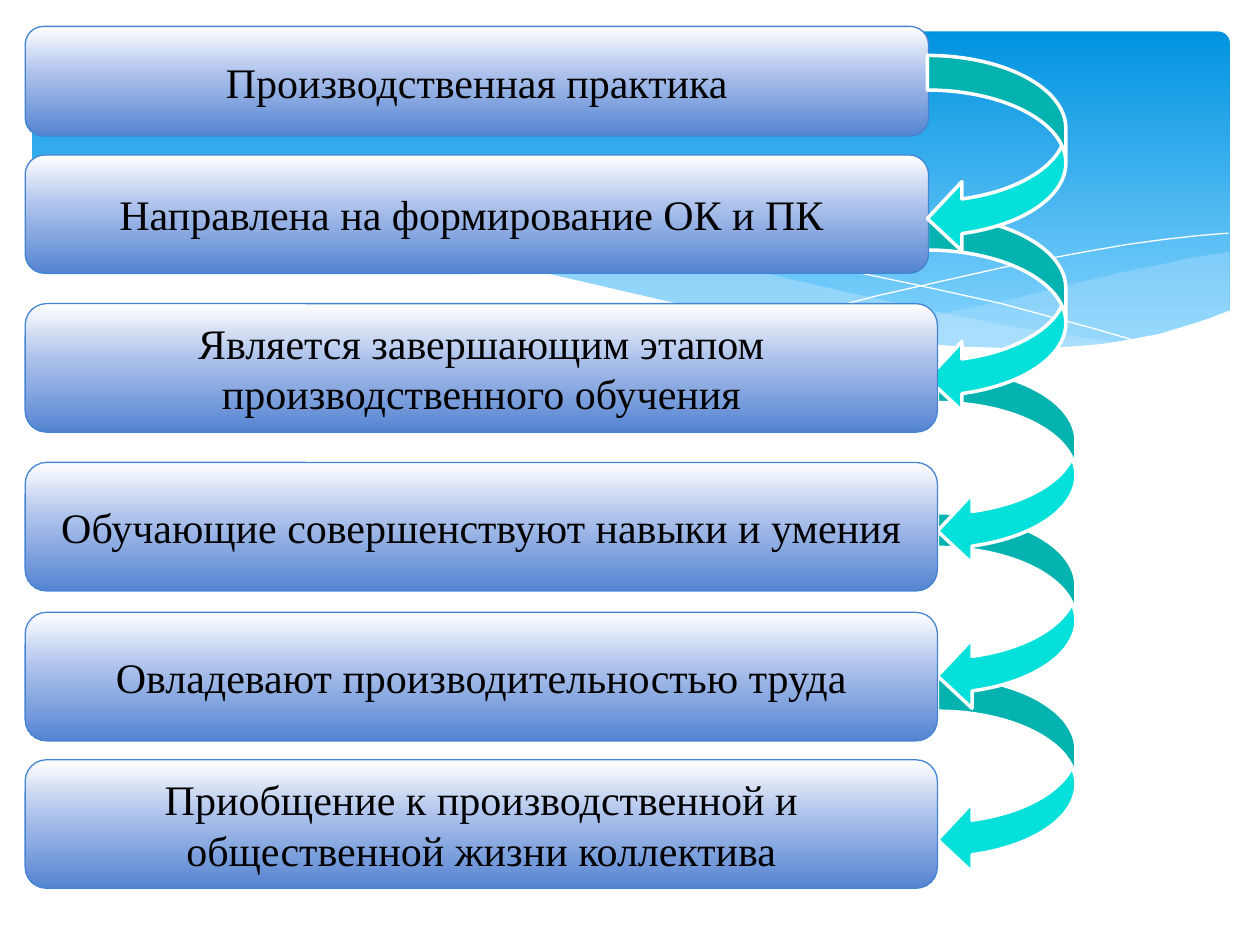
from dataclasses import dataclass

from lxml import etree
from pptx import Presentation, util as u
from pptx.dml.color import RGBColor
from pptx.enum import shapes, text
from pptx.oxml.ns import qn


@dataclass(frozen=True)
class Theme:
    font: str = "Times New Roman"
    size: int = 24
    ink: str = "000000"
    white: str = "FFFFFF"
    wave: str = "C6E7FC"
    arrow: str = "05E0DB"
    box_line: str = "4584D3"
    sky: tuple = ((0, "0293E0"), (90, "83D3FE"))
    box: tuple = ((0, "FFFFFF"), (44, "ABC0EB"), (100, "5484D1"))


@dataclass(frozen=True)
class Step:
    label: str
    top: float
    width: float
    height: float


@dataclass(frozen=True)
class Wave:
    points: tuple
    opacity: int = 100
    filled: bool = True


THEME = Theme()

STEPS = (
    Step("Производственная практика", 0.21, 7.17, 0.87),
    Step("Направлена на формирование ОК и ПК ", 1.23, 7.17, 0.94),
    Step("Является завершающим этапом производственного обучения", 2.41, 7.24, 1.02),
    Step("Обучающие совершенствуют навыки и умения", 3.67, 7.24, 1.02),
    Step("Овладевают производительностью труда", 4.86, 7.24, 1.02),
    Step("Приобщение к производственной и общественной жизни коллектива", 6.03, 7.24, 1.02),
)

# Left and top of each arrow, back to front; the last one lies over the boxes
ARROWS_BEHIND = ((7.44, 5.37), (7.44, 4.07), (7.44, 2.92), (7.36, 1.71))
ARROW_IN_FRONT = (7.36, 0.44)

WAVES = (
    Wave(((9.76, 2), (9.48, 2.04), (9.21, 2.1), (8.91, 2.16), (8.61, 2.23),
          (8.05, 2.37), (7.53, 2.48), (7.06, 2.57), (6.61, 2.65), (6.91, 2.69),
          (7.19, 2.72), (7.45, 2.75), (7.69, 2.77), (8.03, 2.78), (8.35, 2.77),
          (8.63, 2.75), (8.89, 2.72), (9.13, 2.67), (9.35, 2.62), (9.63, 2.52),
          (9.76, 2.47)), 29),
    Wave(((8.93, 2.73), (8.66, 2.69), (8.07, 2.6), (7.41, 2.47), (6.68, 2.31),
          (6.29, 2.22), (5.84, 2.11), (5.41, 2.03), (5.02, 1.96), (4.65, 1.91),
          (4.2, 1.87), (3.8, 1.85), (3.44, 1.86), (3.13, 1.88), (2.86, 1.91),
          (3.23, 1.96), (3.62, 2.03), (4.04, 2.11), (4.49, 2.22), (4.91, 2.32),
          (5.3, 2.4), (5.84, 2.52), (6.34, 2.61), (6.8, 2.68), (7.22, 2.74),
          (7.61, 2.77), (7.96, 2.78), (8.28, 2.78), (8.57, 2.77), (8.76, 2.75)), 40),
    Wave(((3.09, 1.95), (3.28, 1.92), (3.53, 1.89), (3.87, 1.87), (4.33, 1.87),
          (4.69, 1.89), (5.1, 1.92), (5.56, 1.97), (6.08, 2.04), (6.65, 2.13),
          (7.27, 2.26), (7.95, 2.41), (8.69, 2.61), (9.07, 2.72)), filled=False),
    Wave(((6.13, 2.57), (6.53, 2.46), (6.95, 2.35), (7.48, 2.23), (8.06, 2.1),
          (8.66, 1.99), (8.95, 1.94), (9.24, 1.9), (9.51, 1.87), (9.75, 1.85)),
         filled=False),
)
LOWER_EDGE = Wave((
    (9.77, 2.46), (9.59, 2.53), (9.4, 2.59), (9.2, 2.65), (8.99, 2.69),
    (8.75, 2.73), (8.5, 2.75), (8.23, 2.77), (7.93, 2.76), (7.61, 2.75),
    (7.26, 2.72), (6.88, 2.68), (6.48, 2.62), (6.03, 2.54), (5.55, 2.45),
    (5.03, 2.33), (4.47, 2.2), (3.91, 2.07), (3.4, 1.97), (2.92, 1.9),
    (2.5, 1.86), (2.11, 1.84), (1.77, 1.84), (1.46, 1.85), (1.19, 1.87),
    (0.95, 1.91), (0.76, 1.95), (0.59, 1.99), (0.46, 2.03), (0.36, 2.07),
    (0.23, 2.13), (0.23, 3.29), (9.77, 3.29)))


def color(value: str) -> RGBColor:
    return RGBColor.from_string(value)


def fill_gradient(shape, stops: tuple) -> None:
    """Fill from top to bottom with any number of (percent, colour) stops."""
    shape.fill.gradient()
    shape.fill.gradient_angle = 270
    stop_list = shape.element.spPr.find(".//" + qn("a:gsLst"))
    for old_stop in list(stop_list):
        stop_list.remove(old_stop)
    for percent, value in stops:
        stop = etree.SubElement(stop_list, qn("a:gs"), pos=str(percent * 1000))
        etree.SubElement(stop, qn("a:srgbClr"), val=value)


def fill_solid(shape, value: str, opacity: int = 100) -> None:
    shape.fill.solid()
    shape.fill.fore_color.rgb = color(value)
    if opacity < 100:
        node = shape.element.spPr.find(".//" + qn("a:srgbClr"))
        etree.SubElement(node, qn("a:alpha"), val=str(opacity * 1000))


def set_line(shape, value: str, width: float) -> None:
    shape.line.color.rgb = color(value)
    shape.line.width = u.Pt(width)


def add_preset(slide, kind, left: float, top: float, width: float, height: float):
    shape = slide.shapes.add_shape(
        kind, u.Inches(left), u.Inches(top), u.Inches(width), u.Inches(height))
    shape.shadow.inherit = False
    return shape


def add_wave(slide, wave: Wave, value: str) -> None:
    points = [(u.Inches(x), u.Inches(y)) for x, y in wave.points]
    builder = slide.shapes.build_freeform(*points[0])
    builder.add_line_segments(points[1:], close=wave.filled)
    shape = builder.convert_to_shape()
    shape.shadow.inherit = False
    if wave.filled:
        fill_solid(shape, value, wave.opacity)
        shape.line.fill.background()
    else:
        shape.fill.background()
        set_line(shape, THEME.white, 0)


def add_arrow(slide, left: float, top: float) -> None:
    shape = add_preset(slide, shapes.MSO_SHAPE.CURVED_LEFT_ARROW, left, top, 1.1, 1.57)
    fill_solid(shape, THEME.arrow)
    set_line(shape, THEME.white, 2)


def add_step(slide, step: Step) -> None:
    shape = add_preset(slide, shapes.MSO_SHAPE.ROUNDED_RECTANGLE,
                       0.2, step.top, step.width, step.height)
    fill_gradient(shape, THEME.box)
    set_line(shape, THEME.box_line, 0.75)
    frame = shape.text_frame
    frame.word_wrap = True
    frame.vertical_anchor = text.MSO_ANCHOR.MIDDLE
    frame.margin_left = frame.margin_right = u.Inches(0.02)
    frame.margin_top = frame.margin_bottom = u.Inches(0.02)
    paragraph = frame.paragraphs[0]
    paragraph.text = step.label
    paragraph.alignment = text.PP_ALIGN.CENTER
    paragraph.font.name = THEME.font
    paragraph.font.size = u.Pt(THEME.size)
    paragraph.font.color.rgb = color(THEME.ink)


def add_backdrop(slide) -> None:
    sky = add_preset(slide, shapes.MSO_SHAPE.ROUNDED_RECTANGLE, 0.25, 0.25, 9.51, 2.7)
    sky.adjustments[0] = 0.034
    fill_gradient(sky, THEME.sky)
    sky.line.fill.background()
    for wave in WAVES:
        add_wave(slide, wave, THEME.wave)
    add_wave(slide, LOWER_EDGE, THEME.white)


def main() -> None:
    presentation = Presentation()
    presentation.slide_width = u.Inches(10)
    presentation.slide_height = u.Inches(7.5)
    # The slide has no title, so it uses the blank layout
    slide = presentation.slides.add_slide(presentation.slide_layouts[6])
    add_backdrop(slide)

    # Chain of steps, linked by arrows
    for left, top in ARROWS_BEHIND:
        add_arrow(slide, left, top)
    for step in STEPS:
        add_step(slide, step)
    add_arrow(slide, *ARROW_IN_FRONT)
    presentation.save("out.pptx")


if __name__ == "__main__":
    main()
